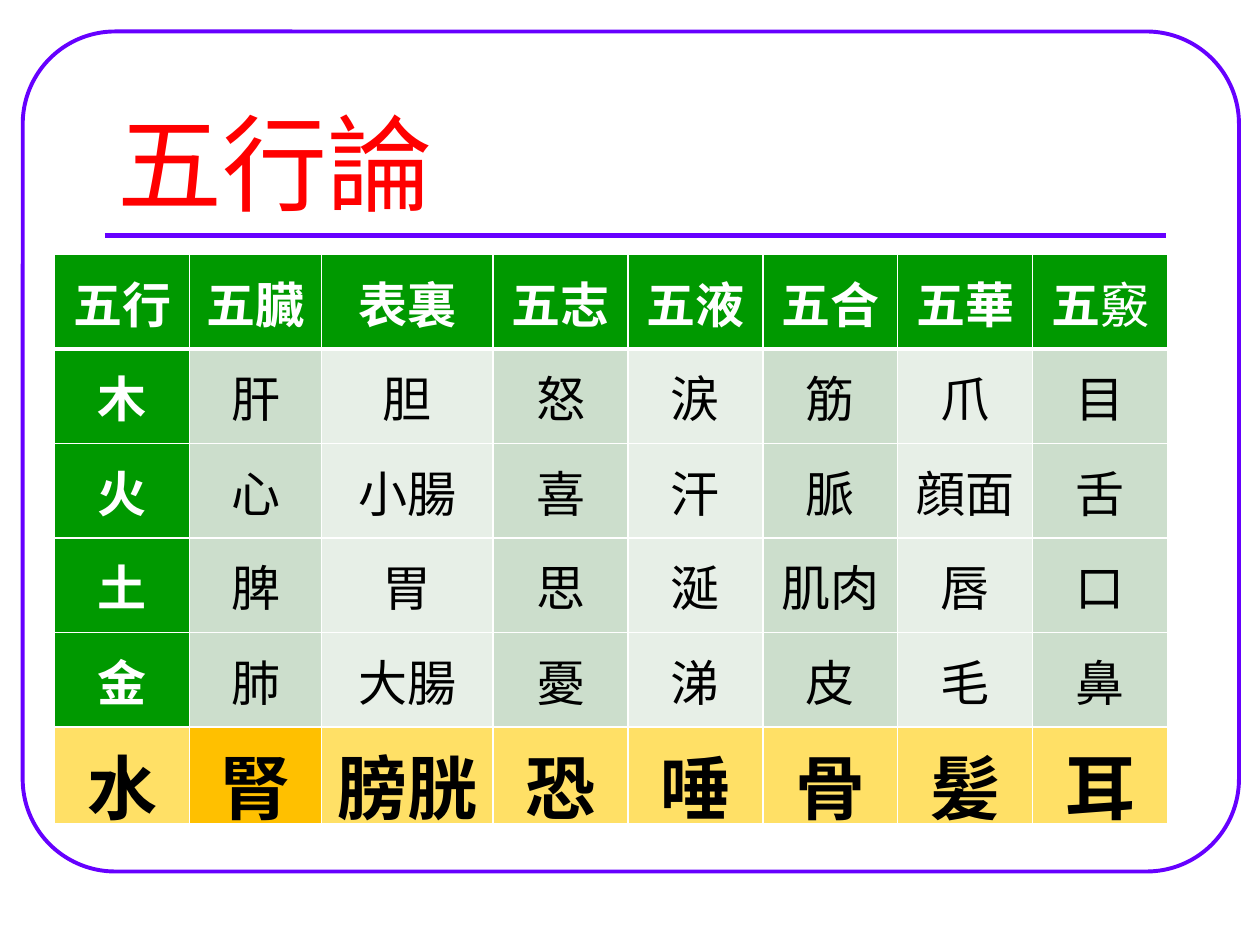
from lxml.etree import SubElement
from pptx import Presentation
from pptx.dml.color import RGBColor
from pptx.enum.shapes import MSO_CONNECTOR as Connector, MSO_SHAPE as Shape
from pptx.enum.text import MSO_ANCHOR as Anchor, PP_ALIGN as Align
from pptx.oxml import parse_xml
from pptx.oxml.ns import nsdecls, qn
from pptx.util import Pt

COLORS = {
    "violet": "6600FF", "red": "FF0000", "white": "FFFFFF", "black": "000000",
    "green": "009900", "band_dark": "CCDECC", "band_light": "E7EFE7",
    "yellow": "FFE066", "amber": "FFC000",
}

# Each cell is a string, or a tuple of (bold part, regular part)
ROWS = [
    ["五行", "五臓", "表裏", "五志", "五液", "五合", "五華", ("五", "竅")],
    ["木", "肝", "胆", "怒", "涙", "筋", "爪", "目"],
    ["火", "心", "小腸", "喜", "汗", "脈", "顔面", "舌"],
    ["土", "脾", "胃", "思", "涎", "肌肉", "唇", "口"],
    ["金", "肺", "大腸", "憂", "涕", "皮", "毛", "鼻"],
    ["水", "腎", "膀胱", "恐", "唾", "骨", "髪", "耳"],
]
COL_WIDTHS = [77.1, 75.6, 97.9] + [77.1] * 5
ROW_HEIGHT = 54


def rgb(name):
    return RGBColor.from_string(COLORS[name])


def cell_style(row, col):
    """Return fill, text colour, size and bold for a table position."""
    if row == len(ROWS) - 1:
        return ("amber" if col == 1 else "yellow"), "black", 40, True
    if row == 0 or col == 0:
        return "green", "white", 28, True
    return ("band_dark" if col % 2 else "band_light"), "black", 28, False


class SlideBuilder:
    title_font = "Montserrat"
    table_font = "Arial"

    def __init__(self, slide):
        self.slide = slide
        self.shapes = slide.shapes

    def frame(self, x, y, w, h, adj):
        sp = self.shapes.add_shape(Shape.ROUNDED_RECTANGLE, Pt(x), Pt(y), Pt(w), Pt(h))
        sp.adjustments[0] = adj
        sp.shadow.inherit = False
        sp.fill.background()
        sp.line.color.rgb = rgb("violet")
        sp.line.width = Pt(2.25)

    def rule(self, x1, x2, y):
        line = self.shapes.add_connector(Connector.STRAIGHT, Pt(x1), Pt(y), Pt(x2), Pt(y))
        line.line.color.rgb = rgb("violet")
        line.line.width = Pt(3)
        SubElement(line._element.spPr, qn("a:effectLst"))

    def title(self, x, y, w, h, text):
        tf = self.shapes.add_textbox(Pt(x), Pt(y), Pt(w), Pt(h)).text_frame
        tf.word_wrap = True
        tf.vertical_anchor = Anchor.BOTTOM
        p = tf.paragraphs[0]
        p.text = text
        p.font.name, p.font.size = self.title_font, Pt(60)
        p.font.color.rgb = rgb("red")

    def borders(self, cell, top, bottom):
        tc_pr = cell._tc.get_or_add_tcPr()
        widths = {"L": 1, "R": 1, "T": top, "B": bottom}
        for i, (side, width) in enumerate(widths.items()):
            tc_pr.insert(i, parse_xml(
                f'<a:ln{side} {nsdecls("a")} w="{Pt(width)}"><a:solidFill>'
                f'<a:srgbClr val="{COLORS["white"]}"/></a:solidFill></a:ln{side}>'))

    def cell(self, cell, content, fill, color, size, bold):
        cell.fill.solid()
        cell.fill.fore_color.rgb = rgb(fill)
        cell.vertical_anchor = Anchor.MIDDLE
        p = cell.text_frame.paragraphs[0]
        p.alignment = Align.CENTER
        p.font.name, p.font.size, p.font.bold = self.table_font, Pt(size), bold
        p.font.color.rgb = rgb(color)
        parts = content if isinstance(content, tuple) else (content,)
        for i, part in enumerate(parts):
            r = p.add_run()
            r.text = part
            if i:
                r.font.bold = False

    def table(self, x, y, rows, widths, row_height):
        table = self.shapes.add_table(
            len(rows), len(widths), Pt(x), Pt(y),
            Pt(sum(widths)), Pt(row_height * len(rows))).table
        for column, width in zip(table.columns, widths):
            column.width = Pt(width)
        for i, row in enumerate(rows):
            table.rows[i].height = Pt(row_height)
            for j, content in enumerate(row):
                cell = table.cell(i, j)
                self.cell(cell, content, *cell_style(i, j))
                self.borders(cell, top=3 if i == 1 else 1, bottom=3 if i == 0 else 1)


def main():
    prs = Presentation()
    prs.slide_width, prs.slide_height = Pt(720), Pt(540)
    s = SlideBuilder(prs.slides.add_slide(prs.slide_layouts[6]))

    # Border and rule under the title
    s.frame(13, 18, 695, 480, 0.11)
    s.rule(60, 666, 134.6)

    # Title
    s.title(60, 42, 606, 90, "五行論")

    # Five elements table
    s.table(31.2, 145.5, ROWS, COL_WIDTHS, ROW_HEIGHT)

    prs.save("out.pptx")


if __name__ == "__main__":
    main()
